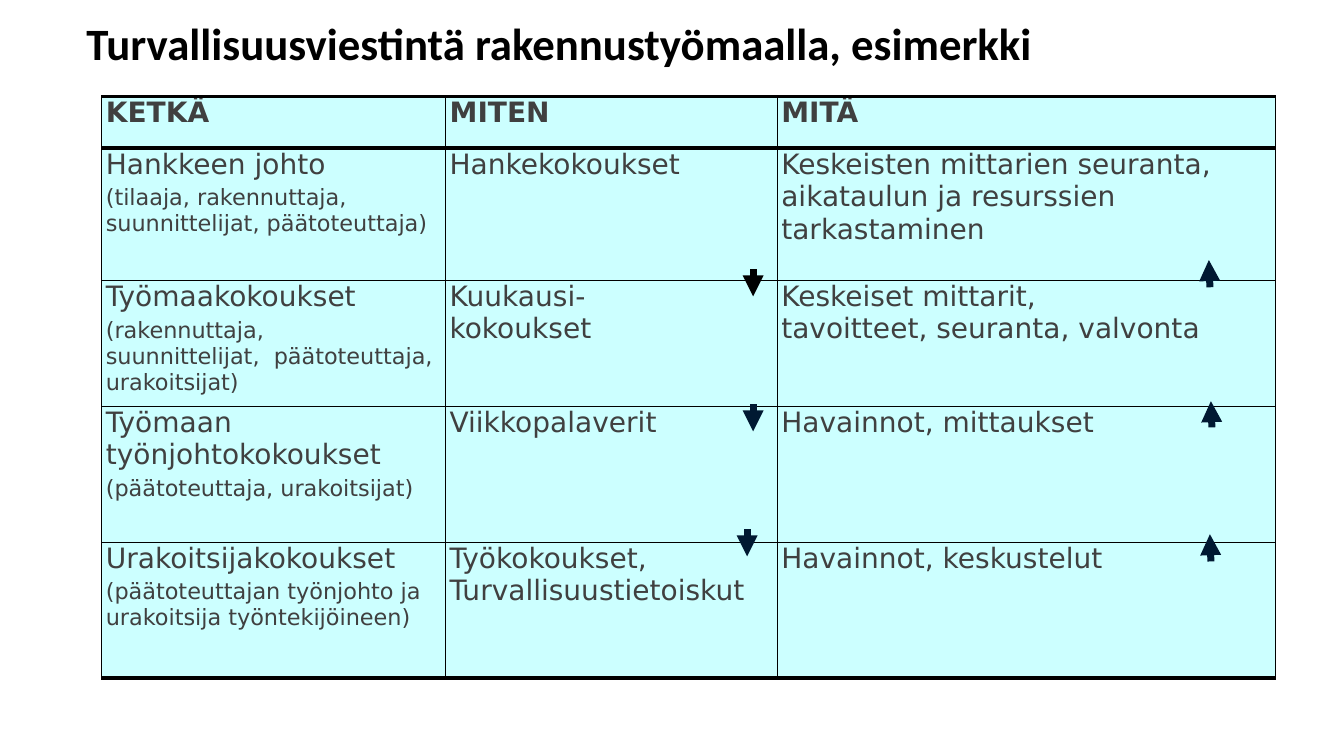
from lxml import etree
from pptx import Presentation
from pptx.dml.color import RGBColor
from pptx.enum.shapes import MSO_CONNECTOR
from pptx.enum.text import MSO_ANCHOR
from pptx.oxml.ns import qn
from pptx.util import Inches, Pt

STRAIGHT = MSO_CONNECTOR.STRAIGHT
MIDDLE = MSO_ANCHOR.MIDDLE

COLORS = {"black": "000000", "navy": "001932", "text": "404040", "cell": "CCFFFF"}
TITLE = {"name": "Calibri", "size": Pt(32), "bold": True}
HEADER = {"name": "DejaVu Sans", "size": Pt(20), "bold": True}
BODY = {**HEADER, "bold": False}
DETAIL = {**BODY, "size": Pt(16)}

COLS = [3.41, 3.29, 4.94]
ROWS = [0.51, 1.31, 1.25, 1.35, 1.35]
RULES = [2.25, 3, 1, 1, 1, 3]
CELLS = [
    [["KETKÄ"], ["MITEN"], ["MITÄ"]],
    [["Hankkeen johto", "(tilaaja, rakennuttaja, suunnittelijat, päätoteuttaja)"],
     ["Hankekokoukset"],
     ["Keskeisten mittarien seuranta, aikataulun ja resurssien tarkastaminen"]],
    [["Työmaakokoukset",
      "(rakennuttaja,\vsuunnittelijat,  päätoteuttaja, urakoitsijat)"],
     ["Kuukausi-\vkokoukset"],
     ["Keskeiset mittarit, \vtavoitteet, seuranta, valvonta"]],
    [["Työmaan työnjohtokokoukset", "(päätoteuttaja, urakoitsijat)"],
     ["Viikkopalaverit"], ["Havainnot, mittaukset"]],
    [["Urakoitsijakokoukset",
      "(päätoteuttajan työnjohto ja urakoitsija työntekijöineen)"],
     ["Työkokoukset,\vTurvallisuustietoiskut"], ["Havainnot, keskustelut"]],
]
ARROWS = [
    (12.01, 5.57, 12, 5.3, "navy"),
    (12.02, 4.24, 12.01, 3.98, "navy"),
    (12, 2.85, 11.99, 2.58, "navy"),
    (7.47, 2.67, 7.47, 2.94, "black"),
    (7.47, 4.01, 7.47, 4.28, "navy"),
    (7.41, 5.25, 7.41, 5.52, "navy"),
]


def rgb(name):
    return RGBColor.from_string(COLORS[name])


def write(p, text, fmt, color):
    p.text = text
    for r in p.runs:
        for key, value in fmt.items():
            setattr(r.font, key, value)
        r.font.color.rgb = rgb(color)


def add_border(cell, side, width):
    ln = etree.SubElement(cell._tc.get_or_add_tcPr(), qn(f"a:ln{side}"), w=str(Pt(width)))
    fill = etree.SubElement(ln, qn("a:solidFill"))
    etree.SubElement(fill, qn("a:srgbClr"), val=COLORS["black"])


def fill_cell(cell, paragraphs, row):
    for side, width in (("L", 1), ("R", 1), ("T", RULES[row]), ("B", RULES[row + 1])):
        add_border(cell, side, width)
    cell.fill.solid()
    cell.fill.fore_color.rgb = rgb("cell")
    cell.margin_left = Inches(0.04)
    cell.margin_right = cell.margin_top = cell.margin_bottom = 0
    tf = cell.text_frame
    for i, text in enumerate(paragraphs):
        p = tf.add_paragraph() if i else tf.paragraphs[0]
        write(p, text, HEADER if row == 0 else DETAIL if i else BODY, "text")
        before = etree.SubElement(p._p.get_or_add_pPr(), qn("a:spcBef"))
        etree.SubElement(before, qn("a:spcPct"), val="20000")


def add_title(s, x, y, w, h):
    tf = s.shapes.add_textbox(Inches(x), Inches(y), Inches(w), Inches(h)).text_frame
    tf.word_wrap = True
    tf.vertical_anchor = MIDDLE
    p = tf.paragraphs[0]
    write(p, "Turvallisuusviestintä rakennustyömaalla, esimerkki", TITLE, "black")
    p.line_spacing = 0.9


def add_meetings(s, x, y, w, h):
    table = s.shapes.add_table(len(ROWS), len(COLS), Inches(x), Inches(y),
                               Inches(w), Inches(h)).table
    table.horz_banding = False
    for column, width in zip(table.columns, COLS):
        column.width = Inches(width)
    for i, (row, height) in enumerate(zip(table.rows, ROWS)):
        row.height = Inches(height)
        for cell, paragraphs in zip(row.cells, CELLS[i]):
            fill_cell(cell, paragraphs, i)


def add_arrow(s, x1, y1, x2, y2, color):
    arrow = s.shapes.add_connector(STRAIGHT, Inches(x1), Inches(y1), Inches(x2), Inches(y2))
    arrow.line.color.rgb = rgb(color)
    arrow.line.width = Pt(5)
    etree.SubElement(arrow.line._get_or_add_ln(), qn("a:tailEnd"), type="triangle")
    etree.SubElement(arrow._element.spPr, qn("a:effectLst"))


def main():
    prs = Presentation()
    prs.slide_width, prs.slide_height = Inches(13.33), Inches(7.5)
    s = prs.slides.add_slide(prs.slide_layouts[6])
    add_title(s, 0.76, 0, 11.97, 0.92)
    add_meetings(s, 1.01, 0.96, sum(COLS), sum(ROWS))
    for arrow in ARROWS:
        add_arrow(s, *arrow)
    prs.save("out.pptx")


if __name__ == "__main__":
    main()
